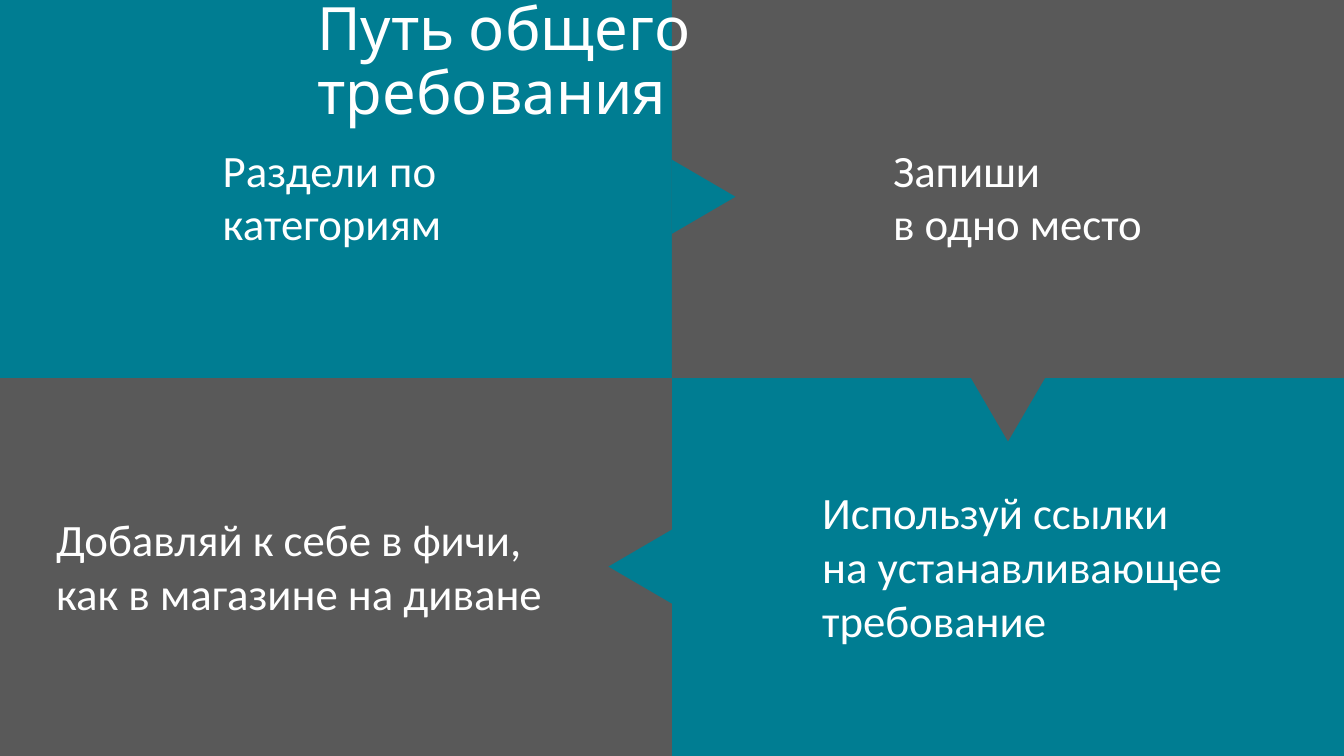
import pptx
import pptx.dml.color
import pptx.enum.shapes
import pptx.enum.text
import pptx.util
from dataclasses import dataclass

Cm = pptx.util.Cm
SHAPES = pptx.enum.shapes.MSO_SHAPE
TEXT = pptx.enum.text


@dataclass(frozen=True)
class Theme:
    teal: str = "007D92"
    gray: str = "595959"
    white: str = "FFFFFF"
    title_font: str = "Cabin"
    body_font: str = "Calibri"
    title_size: int = 32
    body_size: int = 24


theme = Theme()

# Content: each step with the centre x, width and height of its text (cm)
TITLE = "Путь общего требования"
STEPS = [
    ("top", 6.35, 4.78, 2.31, ["Раздели по", "категориям"]),
    ("top", 19.35, 5.44, 2.31, ["Запиши", "в одно место"]),
    ("bottom", 19.47, 8.36, 3.33, ["Используй ссылки", "на устанавливающее", "требование"]),
    ("bottom", 5.8, 9.98, 2.31, ["Добавляй к себе в фичи,", "как в магазине на диване"]),
]

# Grid (cm)
WIDTH, HEIGHT = 25.4, 14.29
HALF_W, HALF_H = WIDTH / 2, HEIGHT / 2
ROW_CENTER = {"top": 3.72, "bottom": 10.71}
ARROW_BASE, ARROW_DEPTH = 1.4, 1.2

# Arrows: centre x, centre y, rotation, colour
ARROWS = [
    (HALF_W + ARROW_DEPTH / 2, ROW_CENTER["top"], 90, theme.teal),
    (HALF_W * 1.5, HALF_H + ARROW_DEPTH / 2, 180, theme.gray),
    (HALF_W - ARROW_DEPTH / 2, ROW_CENTER["bottom"], 270, theme.teal),
]


def rgb(color):
    return pptx.dml.color.RGBColor.from_string(color)


def centered(x, y, width, height):
    return Cm(x - width / 2), Cm(y - height / 2), Cm(width), Cm(height)


def add_block(page, kind, frame, color):
    shape = page.shapes.add_shape(kind, *frame)
    shape.shadow.inherit = False
    shape.fill.solid()
    shape.fill.fore_color.rgb = rgb(color)
    shape.line.fill.background()
    return shape


def write(box, text, font, size, wrap):
    frame = box.text_frame
    frame.text = text
    frame.word_wrap = wrap
    frame.auto_size = TEXT.MSO_AUTO_SIZE.SHAPE_TO_FIT_TEXT
    frame.vertical_anchor = TEXT.MSO_ANCHOR.TOP
    for para in frame.paragraphs:
        para.alignment = TEXT.PP_ALIGN.LEFT
        for span in para.runs:
            span.font.name = font
            span.font.size = pptx.util.Pt(size)
            span.font.color.rgb = rgb(theme.white)


deck = pptx.Presentation()
deck.slide_width, deck.slide_height = Cm(WIDTH), Cm(HEIGHT)
page = deck.slides.add_slide(deck.slide_layouts[5])
page.background.fill.solid()
page.background.fill.fore_color.rgb = rgb(theme.teal)

# Gray quarters
for left, top in [(0, HALF_H), (HALF_W, 0)]:
    add_block(page, SHAPES.RECTANGLE,
              (Cm(left), Cm(top), Cm(HALF_W), Cm(HALF_H)), theme.gray)

# Arrows between quarters
for x, y, rotation, color in ARROWS:
    arrow = add_block(page, SHAPES.ISOSCELES_TRIANGLE,
                      centered(x, y, ARROW_BASE, ARROW_DEPTH), color)
    arrow.rotation = rotation

# Title, raised above the quarters
title = page.shapes.title
title.left, title.top, title.width, title.height = Cm(5.74), Cm(-0.15), Cm(14), Cm(1.63)
write(title, TITLE, theme.title_font, theme.title_size, True)
title.text_frame.paragraphs[0].line_spacing = 0.9
page.shapes[-1].element.addnext(title.element)

# Step texts
for row, x, width, height, lines in STEPS:
    box = page.shapes.add_textbox(*centered(x, ROW_CENTER[row], width, height))
    write(box, "\n".join(lines), theme.body_font, theme.body_size, False)

deck.save("out.pptx")
